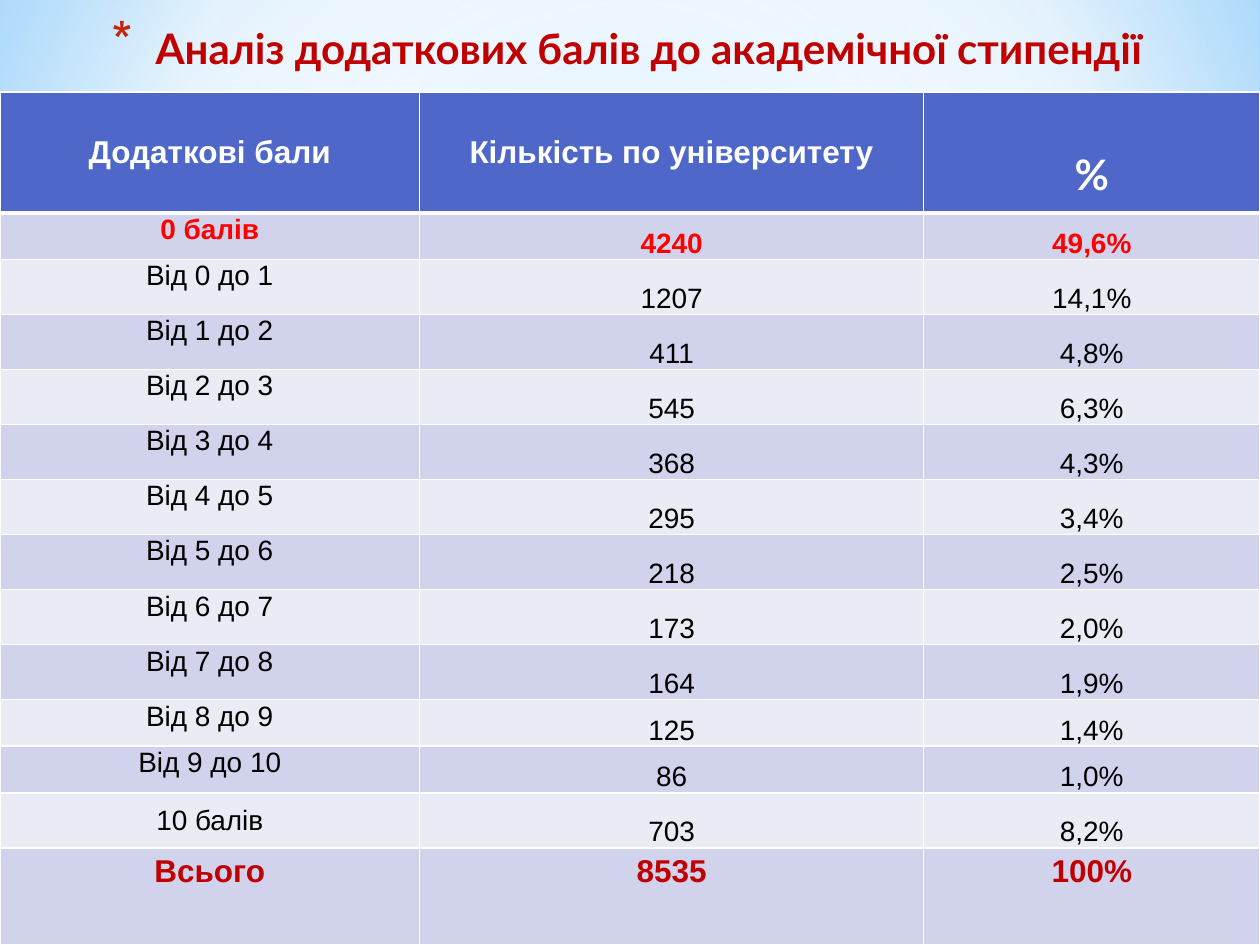
from lxml import etree
from pptx import Presentation
from pptx.dml.color import RGBColor
from pptx.enum.shapes import MSO_SHAPE
from pptx.enum.text import MSO_ANCHOR, PP_ALIGN
from pptx.oxml.ns import qn
from pptx.util import Inches, Pt

RECTANGLE = MSO_SHAPE.RECTANGLE
TOP, MIDDLE, BOTTOM = MSO_ANCHOR.TOP, MSO_ANCHOR.MIDDLE, MSO_ANCHOR.BOTTOM
CENTER = PP_ALIGN.CENTER

WHITE = RGBColor(0xFF, 0xFF, 0xFF)
BLACK = RGBColor(0x00, 0x00, 0x00)
RED = RGBColor(0xFF, 0x00, 0x00)
DARK_RED = RGBColor(0xC0, 0x00, 0x00)
BULLET_RED = RGBColor(0xC3, 0x26, 0x0C)
HEADER_BLUE = RGBColor(0x4E, 0x67, 0xC8)
BAND_DARK = RGBColor(0xD0, 0xD3, 0xEB)
BAND_LIGHT = RGBColor(0xE9, 0xEB, 0xF5)
SKY = RGBColor(0x9E, 0xD5, 0xFF)
DEEP_SKY = RGBColor(0x5B, 0xB9, 0xFF)
PALE_SKY = RGBColor(0xB4, 0xDC, 0xFA)

HEADERS = ["Додаткові бали", "Кількість по університету", "%"]
COUNTS = [4240, 1207, 411, 545, 368, 295, 218, 173, 164, 125, 86, 703, 8535]
SHARES = ["49,6%", "14,1%", "4,8%", "6,3%", "4,3%", "3,4%", "2,5%",
          "2,0%", "1,9%", "1,4%", "1,0%", "8,2%", "100%"]
LABELS = ["0 балів"] + [f"Від {start} до {start + 1}" for start in range(10)]
LABELS += ["10 балів", "Всього"]


def set_text(frame, text, size=16, font="Arial", color=BLACK, bold=False):
    paragraph = frame.paragraphs[0]
    paragraph.alignment = CENTER
    run = paragraph.add_run()
    run.text = text
    run.font.size = Pt(size)
    run.font.name = font
    run.font.color.rgb = color
    run.font.bold = bold
    return paragraph


def set_radial_fill(fill, owner, stops, focus):
    fill.solid()
    solid = owner.find(".//" + qn("a:solidFill"))
    gradient = etree.Element(qn("a:gradFill"), rotWithShape="1")
    stop_list = etree.SubElement(gradient, qn("a:gsLst"))
    for position, color, opacity in stops:
        stop = etree.SubElement(stop_list, qn("a:gs"), pos=str(position * 1000))
        tone = etree.SubElement(stop, qn("a:srgbClr"), val=str(color))
        etree.SubElement(tone, qn("a:alpha"), val=str(opacity * 1000))
    circle = etree.SubElement(gradient, qn("a:path"), {"path": "circle"})
    edges = {side: str(value * 1000) for side, value in zip("ltrb", focus)}
    etree.SubElement(circle, qn("a:fillToRect"), edges)
    solid.getparent().replace(solid, gradient)


presentation = Presentation()
presentation.slide_width = Inches(10)
presentation.slide_height = Inches(7.5)
slide = presentation.slides.add_slide(presentation.slide_layouts[6])

set_radial_fill(slide.background.fill, slide.element,
                [(0, SKY, 100), (60, WHITE, 100), (100, DEEP_SKY, 100)],
                (20, 10, 20, 60))

glow = slide.shapes.add_shape(RECTANGLE, 0, 0, Inches(10), Inches(5.58))
glow.shadow.inherit = False
glow.line.fill.background()
set_radial_fill(glow.fill, glow.element,
                [(0, WHITE, 89), (48, WHITE, 62), (100, PALE_SKY, 79)],
                (50, 50, 50, 50))

rows = [HEADERS] + [list(row) for row in zip(LABELS, map(str, COUNTS), SHARES)]
last_row = len(rows) - 1
row_heights = {0: 0.96, 1: 0.37, 10: 0.37, 11: 0.37, last_row: 0.77}
regular_height = (6.77 - sum(row_heights.values())) / (len(rows) - len(row_heights))

table_frame = slide.shapes.add_table(len(rows), len(HEADERS), 0, Inches(0.73),
                                     Inches(10), Inches(6.77))
table = table_frame.table
for column, width in zip(table.columns, [3.33, 4, 2.67]):
    column.width = Inches(width)

for row_index, row in enumerate(rows):
    table.rows[row_index].height = Inches(row_heights.get(row_index, regular_height))
    for column_index, text in enumerate(row):
        cell = table.cell(row_index, column_index)
        cell.fill.solid()
        cell.fill.fore_color.rgb = BAND_DARK if row_index % 2 else BAND_LIGHT
        cell.vertical_anchor = TOP
        if row_index == 0:
            cell.fill.fore_color.rgb = HEADER_BLUE
            is_percent = text == "%"
            cell.margin_top = Inches(0.45 if is_percent else 0.34)
            set_text(cell.text_frame, text, size=24 if is_percent else 18,
                     font="Lato" if is_percent else "Arial", color=WHITE, bold=True)
        elif row_index == last_row:
            cell.fill.fore_color.rgb = BAND_DARK
            set_text(cell.text_frame, text, size=18, color=DARK_RED, bold=True)
        else:
            cell.margin_left = cell.margin_right = cell.margin_top = Inches(0.01)
            cell.margin_bottom = 0
            if column_index > 0:
                cell.vertical_anchor = BOTTOM
            elif row_index == last_row - 1:
                cell.vertical_anchor = MIDDLE
            is_zero = row_index == 1
            set_text(cell.text_frame, text, color=RED if is_zero else BLACK, bold=is_zero)

        properties = cell._tc.get_or_add_tcPr()
        for order, side in enumerate("LRTB"):
            is_thick = (row_index, side) in [(0, "B"), (1, "T")]
            border = etree.Element(qn(f"a:ln{side}"), w=str(Pt(3 if is_thick else 1)))
            border_fill = etree.SubElement(border, qn("a:solidFill"))
            etree.SubElement(border_fill, qn("a:srgbClr"), val=str(WHITE))
            properties.insert(order, border)

title = slide.shapes.add_textbox(Inches(0.43), Inches(0.13), Inches(9.09), Inches(1.1))
title.text_frame.word_wrap = True
title_paragraph = set_text(title.text_frame, "Аналіз додаткових балів до академічної стипендії",
                           size=24, font="Lato", color=DARK_RED, bold=True)
title_properties = title_paragraph._p.get_or_add_pPr()
title_properties.set("marL", str(Inches(0.35)))
title_properties.set("indent", str(-Inches(0.35)))
bullet_color = etree.SubElement(title_properties, qn("a:buClr"))
etree.SubElement(bullet_color, qn("a:srgbClr"), val=str(BULLET_RED))
etree.SubElement(title_properties, qn("a:buSzPct"), val="128000")
etree.SubElement(title_properties, qn("a:buChar"), char="*")

presentation.save("out.pptx")
